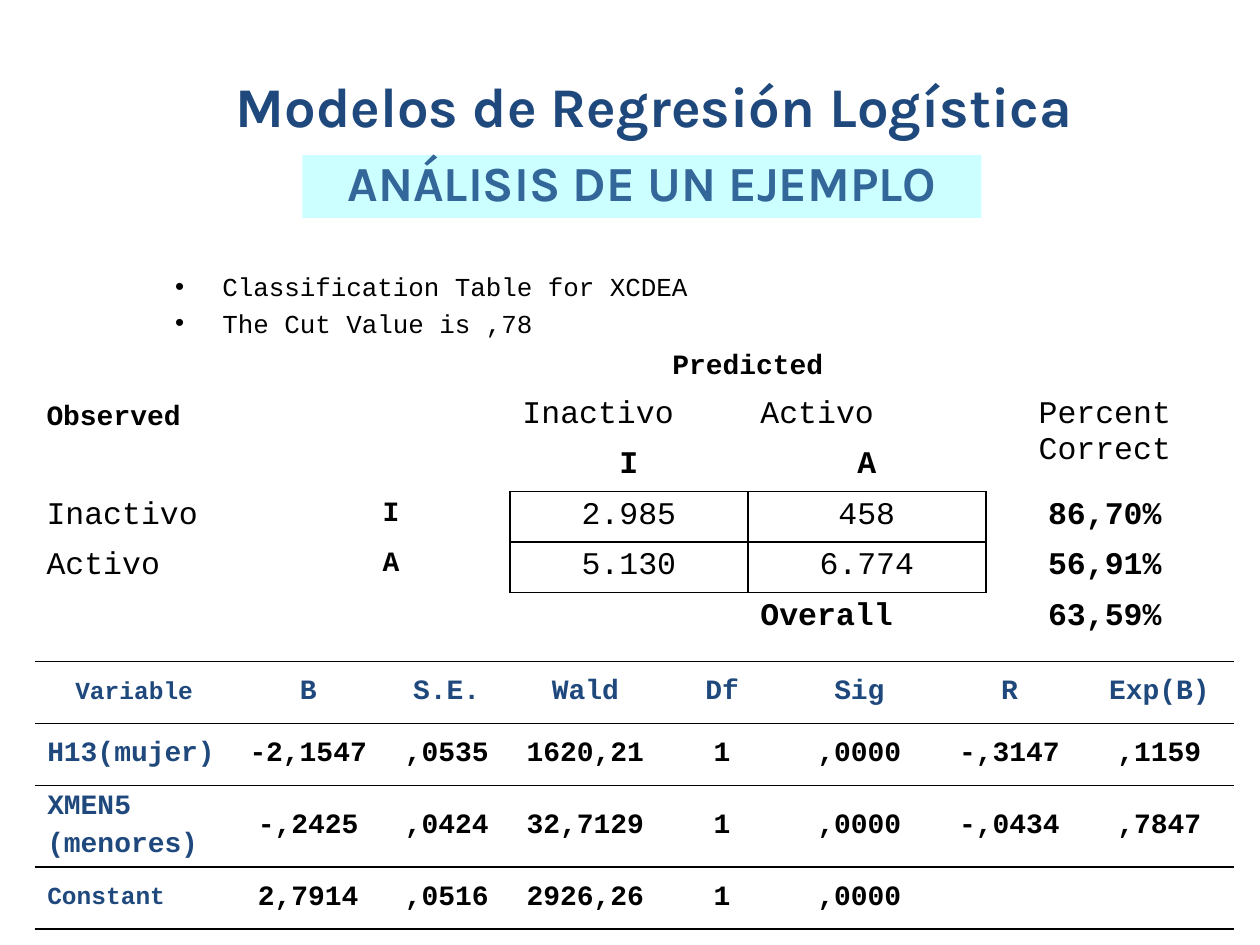
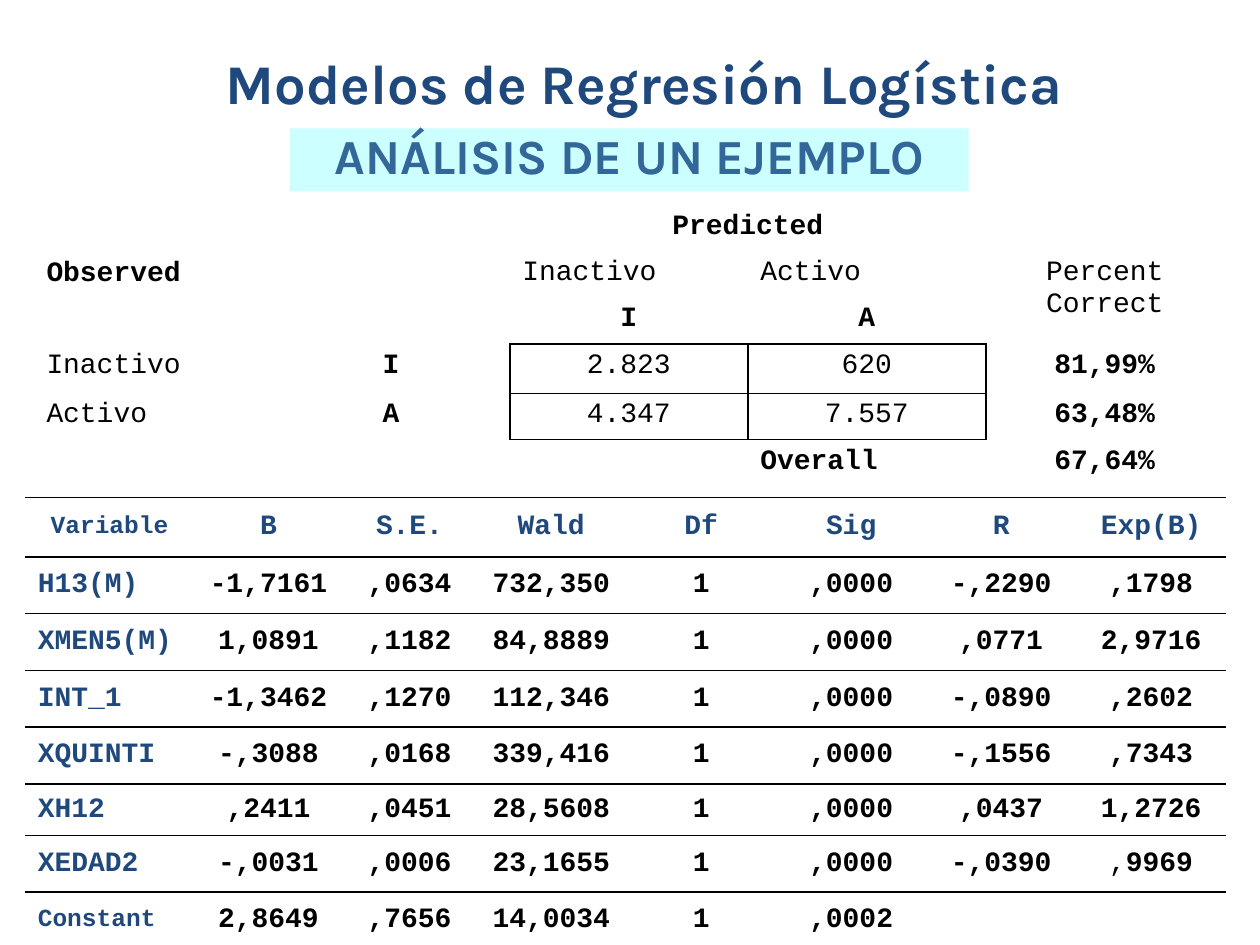
from dataclasses import dataclass
from itertools import product

from lxml.etree import SubElement
from pptx import Presentation
from pptx.dml.color import RGBColor
from pptx.enum.shapes import MSO_SHAPE
from pptx.enum.text import MSO_ANCHOR, MSO_AUTO_SIZE, PP_ALIGN
from pptx.oxml import parse_xml
from pptx.oxml.ns import nsdecls, qn
from pptx.util import Pt


@dataclass
class Theme:
    navy: RGBColor = RGBColor(0x1F, 0x49, 0x7D)
    steel: RGBColor = RGBColor(0x33, 0x66, 0x99)
    aqua: RGBColor = RGBColor(0xCC, 0xFF, 0xFF)
    black: RGBColor = RGBColor(0, 0, 0)
    heading_font: str = "Karla"
    data_font: str = "Courier New"
    title: float = 32
    subtitle: float = 28
    large: float = 18
    data: float = 16
    label: float = 14
    bullet: float = 14.8
    border: float = 1
    plain_table: str = "{2D5ABB26-0587-4C30-8999-92F81FD0307C}"


theme = Theme()


def add_run(p, text, font, size, color, bold):
    r = p.add_run()
    r.text = text
    r.font.name = font
    r.font.size = Pt(size)
    r.font.color.rgb = color
    r.font.bold = bold


def fill_cell(cell, text, size, color, bold, align, anchor, sides):
    cell.fill.background()
    cell.vertical_anchor = anchor
    tf = cell.text_frame
    for i, line in enumerate(text.split("\n")):
        p = tf.add_paragraph() if i else tf.paragraphs[0]
        p.alignment = align
        if i:
            p.space_before = Pt(0.2 * size)
        parts = line.split("|")
        for j, part in enumerate(parts):
            if part:
                last = j == len(parts) - 1
                add_run(p, part, theme.data_font, size, color, bold and last)
    if not text:
        SubElement(p._p, qn("a:endParaRPr"), sz=str(int(size * 100)))
    tcPr = cell._tc.get_or_add_tcPr()
    for i, side in enumerate(sides):
        tcPr.insert(i, parse_xml(
            f'<a:ln{side} {nsdecls("a")} w="{Pt(theme.border)}"><a:solidFill>'
            f'<a:srgbClr val="{theme.black}"/></a:solidFill></a:ln{side}>'))


matrix_borders = {(2, 2): "B", (2, 3): "B", (3, 1): "R", (4, 1): "R",
                  (3, 2): "LRTB", (3, 3): "LRTB", (4, 2): "LRT", (4, 3): "LRTB",
                  (3, 4): "L", (4, 4): "L", (5, 3): "T"}
matrix_left = {(0, 0), (1, 2), (1, 3), (3, 0), (4, 0), (5, 3)}
matrix_regular = {(1, 2), (1, 3), (1, 4)} | set(product((3, 4), (0, 2, 3)))
matrix_merges = [((0, 0), (2, 0)), ((0, 1), (2, 1)), ((0, 2), (0, 3)),
                 ((1, 4), (2, 4)), ((5, 0), (5, 2))]
header = ["Variable", "B", "S.E.", "Wald", "Df", "Sig", "R", "Exp(B)"]

slides = [
    dict(
        layout=1, title=(127.4, 37.4), band=(172.8, 88.6),
        bullets=["Classification Table for XCDEA", "The Cut Value is ,78"],
        matrix_top=196.6, matrix_size=theme.large,
        matrix_rows=[26.3] + [28.8] * 5,
        counts=[["2.985", "458", "86,70%"], ["5.130", "6.774", "56,91%"]],
        overall="63,59%",
        stats_at=(19.8, 378),
        stats_cols=[113.8, 85, 73.4, 85, 71.3] + [85.7] * 3,
        stats_rows=[35.4, 35.4, 46.4, 35.4],
        stats=[
            ["H13(mujer)", "-2,1547", ",0535", "1620,21", "1", ",0000", "-,3147", ",1159"],
            ["XMEN5\n(menores)", "-,2425", ",0424", "32,7129", "1", ",0000", "-,0434", ",7847"],
            ["Constant", "2,7914", ",0516", "2926,26", "1", ",0000", "", ""],
        ]),
    dict(
        layout=5, title=(121.7, 24.5), band=(165.6, 73.4),
        bullets=[],
        matrix_top=116.6, matrix_size=theme.data,
        matrix_rows=[26.4] * 3 + [28.2] + [26.4] * 2,
        counts=[["2.823", "620", "81,99%"], ["4.347", "7.557", "63,48%"]],
        overall="67,64%",
        stats_at=(14.4, 284.4),
        stats_cols=[96.5, 85, 76.3] + [85.7] * 5,
        stats_rows=[33.9] + [32.4] * 4 + [29.5] + [32.4] * 2,
        stats=[
            ["H13(M)", "-1,7161", ",0634", "732,350", "1", ",0000", "-,2290", ",1798"],
            ["XMEN5(M)", "1,0891", ",1182", "84,8889", "1", ",0000", ",0771", "2,9716"],
            ["INT_1", "-1,3462", ",1270", "112,346", "1", ",0000", "-,0890", ",2602"],
            ["XQUINTI", "-,3088", ",0168", "339,416", "1", ",0000", "-,1556", ",7343"],
            ["XH12", ",2411", ",0451", "28,5608", "1", ",0000", ",0437", "1,2726"],
            ["XEDAD2", "-,0031", ",0006", "23,1655", "1", ",0000", "-,0390", ",|9969"],
            ["Constant", "2,8649", ",7656", "14,0034", "1", ",0002", "", ""],
        ]),
]

prs = Presentation()
prs.slide_width, prs.slide_height = Pt(720), Pt(540)

for data in slides:
    slide = prs.slides.add_slide(prs.slide_layouts[data["layout"]])

    sp = slide.shapes.title
    sp.left, sp.top = map(Pt, data["title"])
    sp.width, sp.height = Pt(520), Pt(45.4)
    tf = sp.text_frame
    tf.auto_size = MSO_AUTO_SIZE.NONE
    p = tf.paragraphs[0]
    p.alignment = PP_ALIGN.LEFT
    add_run(p, "Modelos de Regresión Logística", theme.heading_font,
            theme.title, theme.navy, True)

    sp = slide.shapes.add_shape(MSO_SHAPE.RECTANGLE, *map(Pt, data["band"]),
                                Pt(388), Pt(36))
    sp.shadow.inherit = False
    sp.fill.solid()
    sp.fill.fore_color.rgb = theme.aqua
    sp.line.fill.background()
    tf = sp.text_frame
    tf.word_wrap = True
    tf.vertical_anchor = MSO_ANCHOR.MIDDLE
    p = tf.paragraphs[0]
    p.alignment = PP_ALIGN.CENTER
    p.line_spacing = 0.85
    add_run(p, "ANÁLISIS DE UN EJEMPLO", theme.heading_font,
            theme.subtitle, theme.steel, True)

    if data["bullets"]:
        sp = slide.placeholders[1]
        sp.left, sp.top, sp.width, sp.height = map(Pt, (92.9, 151.2, 573, 43.2))
        tf = sp.text_frame
        tf.auto_size = MSO_AUTO_SIZE.NONE
        for i, line in enumerate(data["bullets"]):
            p = tf.add_paragraph() if i else tf.paragraphs[0]
            add_run(p, line, theme.data_font, theme.bullet, theme.black, False)

    inactive, active = data["counts"]
    matrix = [
        ["Observed", "", "Predicted", "", ""],
        ["", "", "Inactivo", "Activo", "Percent Correct"],
        ["", "", "I", "A", ""],
        ["Inactivo", "I"] + inactive,
        ["Activo", "A"] + active,
        ["", "", "", "Overall", data["overall"]],
    ]
    tables = []
    for rows, cols, heights, (left, top) in [
            (matrix, [136] * 5, data["matrix_rows"], (19.4, data["matrix_top"])),
            ([header] + data["stats"], data["stats_cols"], data["stats_rows"],
             data["stats_at"])]:
        table = slide.shapes.add_table(len(rows), len(cols), Pt(left), Pt(top),
                                       Pt(sum(cols)), Pt(sum(heights))).table
        table.first_row = table.horz_banding = False
        table._tbl.tblPr.find(qn("a:tableStyleId")).text = theme.plain_table
        for column, width in zip(table.columns, cols):
            column.width = Pt(width)
        for row, height in zip(table.rows, heights):
            row.height = Pt(height)
        tables.append(table)
    matrix_table, stats_table = tables

    for first, last in matrix_merges:
        matrix_table.cell(*first).merge(matrix_table.cell(*last))
    for at in product(range(6), range(5)):
        row, col = at
        text = matrix[row][col]
        small = not text or row == 0 or col == 1
        fill_cell(matrix_table.cell(row, col), text,
                  theme.data if small else data["matrix_size"],
                  theme.black, at not in matrix_regular,
                  PP_ALIGN.LEFT if at in matrix_left else PP_ALIGN.CENTER,
                  MSO_ANCHOR.MIDDLE if row == 0 else MSO_ANCHOR.TOP,
                  matrix_borders.get(at, ""))

    for row, values in enumerate([header] + data["stats"]):
        for col, text in enumerate(values):
            fill_cell(stats_table.cell(row, col), text,
                      theme.label if text in ("Variable", "Constant") else theme.data,
                      theme.navy if row == 0 or col == 0 else theme.black, True,
                      PP_ALIGN.LEFT if row and col == 0 else PP_ALIGN.CENTER,
                      MSO_ANCHOR.MIDDLE, "TB")

prs.save("out.pptx")
